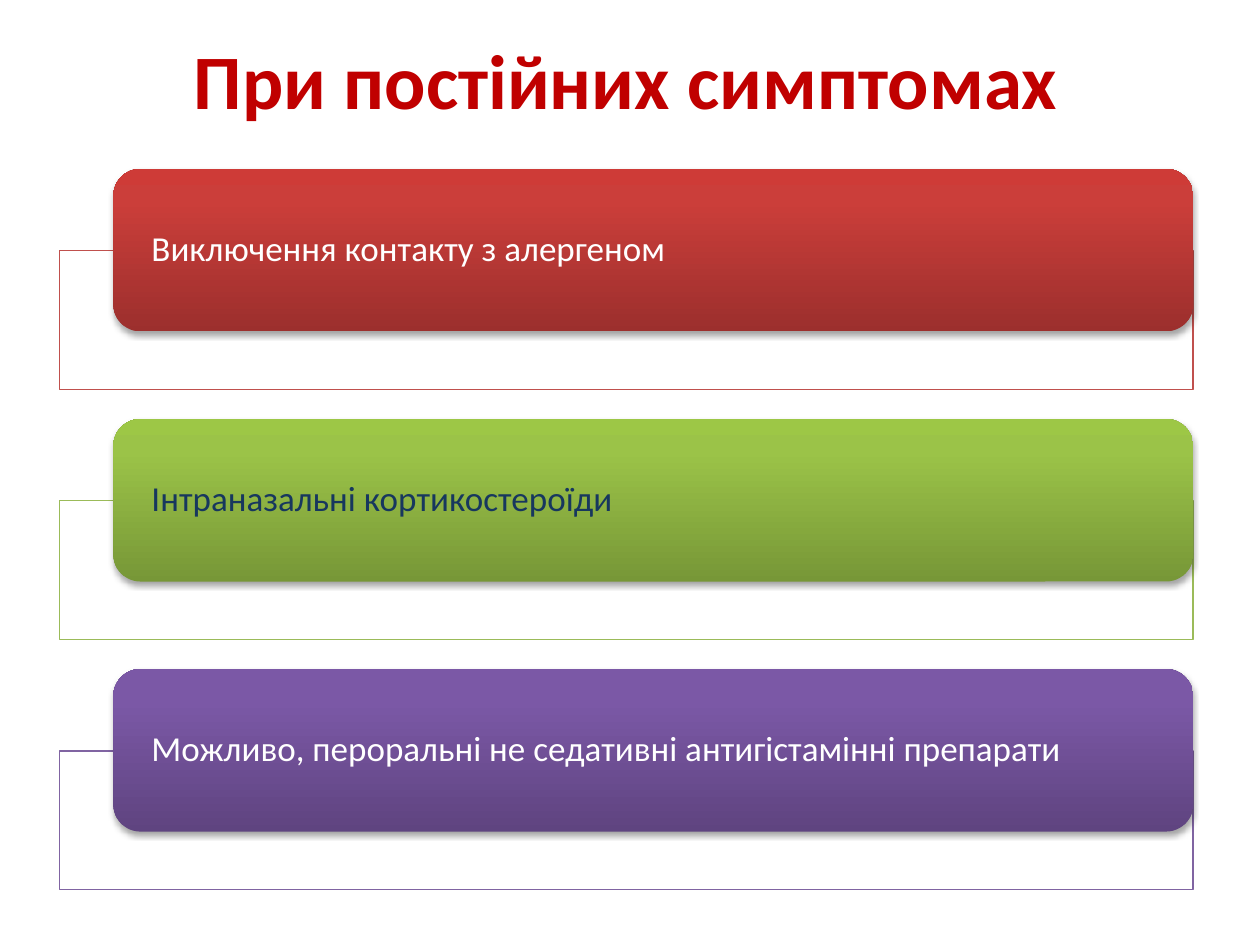
from copy import deepcopy
from dataclasses import dataclass

from lxml.etree import SubElement
from pptx import Presentation
from pptx.dml.color import RGBColor as RGB
from pptx.enum.shapes import MSO_SHAPE as SHAPE
from pptx.enum.text import MSO_ANCHOR as ANCHOR, PP_ALIGN as ALIGN
from pptx.oxml.ns import qn
from pptx.util import Inches, Pt


@dataclass(frozen=True)
class Theme:
    font: str = "Calibri"
    title_size: int = 44
    item_size: int = 20
    title: str = "C00000"
    white: str = "FFFFFF"
    navy: str = "17375E"
    shadow: str = "000000"


theme = Theme()

# text, text colour, frame line, gradient from bottom to top
items = [
    ("Виключення контакту з алергеном", theme.white, "C0504D",
     ("9C2F2D", "CB3E3A", "CE3B37")),
    ("Інтраназальні кортикостероїди", theme.navy, "9BBB59",
     ("779737", "9BC348", "9DC746")),
    ("Можливо, пероральні не седативні антигістамінні препарати", theme.white, "8064A2",
     ("5F4480", "7B58A6", "7C57A8")),
]


def fill_gradient(sp, colors):
    """Fill with three colours running from the bottom edge to the top."""
    fill = sp.fill
    fill.gradient()
    fill.gradient_angle = 90
    stops = sp._element.spPr.find(".//" + qn("a:gsLst"))
    stops.append(deepcopy(stops[-1]))
    for stop, position, color in zip(fill.gradient_stops, (0, 0.8, 1), colors):
        stop.position = position
        stop.color.rgb = RGB.from_string(color)


def add_shadow(sp):
    sp.shadow.inherit = False
    effects = sp._element.spPr.find(qn("a:effectLst"))
    shadow = SubElement(effects, qn("a:outerShdw"), blurRad="40000", dist="23000",
                        dir="5400000", rotWithShape="0")
    color = SubElement(shadow, qn("a:srgbClr"), val=theme.shadow)
    SubElement(color, qn("a:alpha"), val="35000")


prs = Presentation()
prs.slide_width, prs.slide_height = Inches(10), Inches(7.5)
s = prs.slides.add_slide(prs.slide_layouts[5])

left, width = 0.47, 9
title = s.shapes.title
title.left, title.top = Inches(left), Inches(0)
title.width, title.height = Inches(width), Inches(1.25)
tf = title.text_frame
tf.text = "При постійних симптомах"
tf.vertical_anchor = ANCHOR.MIDDLE
p = tf.paragraphs[0]
p.alignment = ALIGN.CENTER
p.font.name, p.font.size, p.font.bold = theme.font, Pt(theme.title_size), True
p.font.color.rgb = RGB.from_string(theme.title)

first_top, step, indent = 1.34, 1.985, 0.43
for i, (text, text_color, line_color, gradient) in enumerate(items):
    top = first_top + i * step

    frame = s.shapes.add_shape(SHAPE.RECTANGLE, Inches(left), Inches(top + 0.65),
                               Inches(width), Inches(1.1))
    frame.shadow.inherit = False
    frame.fill.solid()
    frame.fill.fore_color.rgb = RGB.from_string(theme.white)
    frame.line.color.rgb = RGB.from_string(line_color)
    frame.line.width = Pt(0.75)

    bar = s.shapes.add_shape(SHAPE.ROUNDED_RECTANGLE, Inches(left + indent), Inches(top),
                             Inches(width - indent), Inches(1.29))
    fill_gradient(bar, gradient)
    bar.line.fill.background()
    add_shadow(bar)

    tf = bar.text_frame
    tf.word_wrap = True
    tf.vertical_anchor = ANCHOR.MIDDLE
    tf.margin_left = tf.margin_right = Inches(0.24)
    tf.margin_top = tf.margin_bottom = Inches(0)
    p = tf.paragraphs[0]
    p.text = text
    p.alignment = ALIGN.LEFT
    p.line_spacing = 0.9
    p.font.name, p.font.size = theme.font, Pt(theme.item_size)
    p.font.color.rgb = RGB.from_string(text_color)

prs.save("out.pptx")
